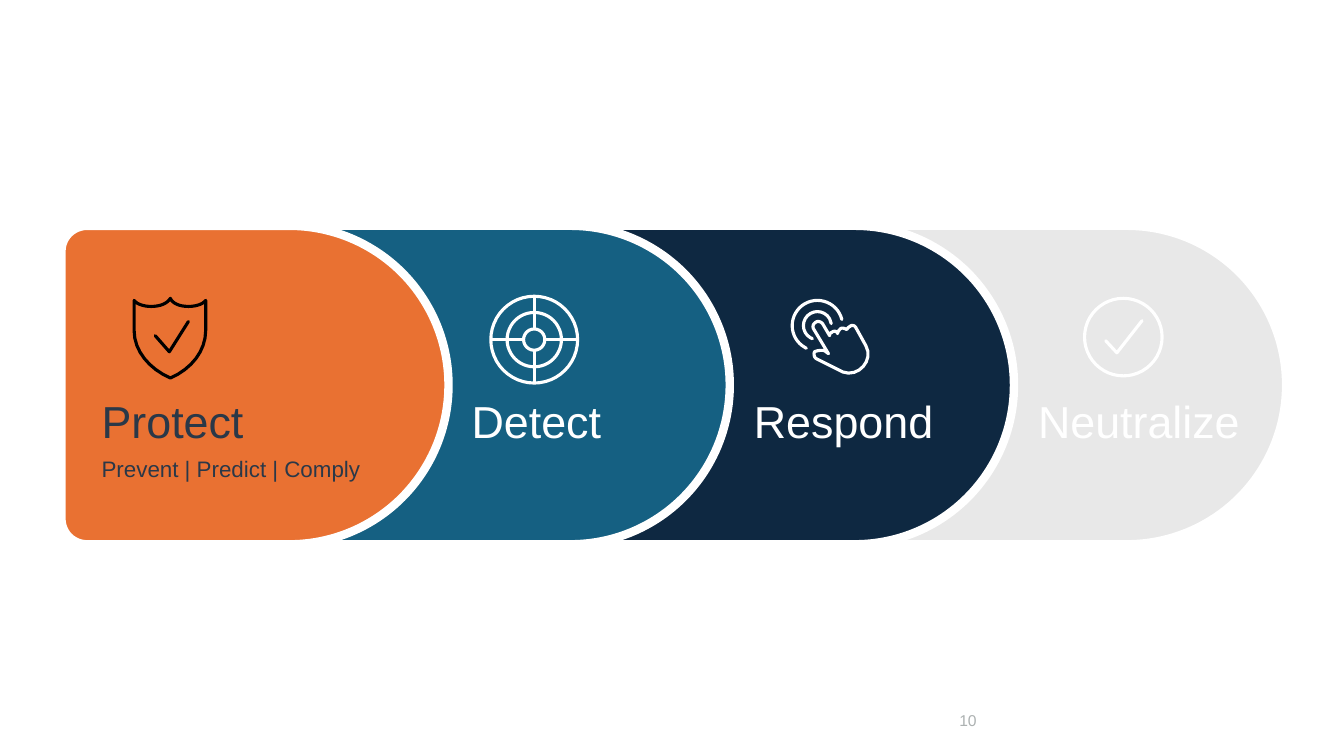
import pptx
import pptx.util
import pptx.dml.color
import pptx.enum.shapes
import pptx.enum.text
from dataclasses import dataclass
from lxml import etree

Pt = pptx.util.Pt
RGB = pptx.dml.color.RGBColor.from_string
PRESET = pptx.enum.shapes.MSO_SHAPE
ANCHOR = pptx.enum.text.MSO_ANCHOR
DRAWING = "{http://schemas.openxmlformats.org/drawingml/2006/main}"


@dataclass(frozen=True)
class Theme:
    font: str = "Arial"
    protect: str = "E97132"
    detect: str = "156082"
    respond: str = "0E2841"
    neutralize: str = "E8E8E8"
    white: str = "FFFFFF"
    black: str = "000000"
    ink: str = "2A3848"
    muted: str = "ACB1B1"
    heading: float = 32
    detail: float = 16
    number: float = 11.2
    gap: float = 6
    stroke: float = 2.25


theme = Theme()
deck = pptx.Presentation()
deck.slide_width, deck.slide_height = Pt(960), Pt(540)
slide = deck.slides.add_slide(deck.slide_layouts[6])
shapes = slide.shapes


def add_text(text, left, top, width, height, size, color, anchor=ANCHOR.TOP):
    box = shapes.add_textbox(Pt(left), Pt(top), Pt(width), Pt(height))
    box.text_frame.word_wrap = True
    box.text_frame.vertical_anchor = anchor
    paragraph = box.text_frame.paragraphs[0]
    paragraph.text = text
    paragraph.font.name = theme.font
    paragraph.font.size = Pt(size)
    paragraph.font.color.rgb = RGB(color)


def add_outline(start, steps, close):
    points = [start]
    for step in steps:
        if len(step) == 2:
            points.append(step)
            continue
        x0, y0 = points[-1]
        x1, y1, x2, y2, x3, y3 = step
        for t in (n / 8 for n in range(1, 9)):
            a, b, c, d = (1 - t) ** 3, 3 * t * (1 - t) ** 2, 3 * t * t * (1 - t), t ** 3
            points.append((a * x0 + b * x1 + c * x2 + d * x3, a * y0 + b * y1 + c * y2 + d * y3))
    corners = [(Pt(x), Pt(y)) for x, y in points]
    builder = shapes.build_freeform(*corners[0])
    builder.add_line_segments(corners[1:], close=close)
    return builder.convert_to_shape()


band_top, band_height = 161.3, 227.5
bands = []
for left, width, color in (
    (413.3, 505.4, theme.neutralize),
    (218.9, 505.4, theme.respond),
    (43.2, 478.1, theme.detect),
):
    band = shapes.add_shape(PRESET.ROUNDED_RECTANGLE, Pt(left), Pt(band_top), Pt(width), Pt(band_height))
    band.adjustments[0] = 0.5
    bands.append((band, color))

protect_left, protect_width = 43.9, 276.5
inset = (protect_width - band_height) / 2
protect_band = shapes.add_shape(
    PRESET.ROUND_2_SAME_RECTANGLE,
    Pt(protect_left + inset), Pt(band_top - inset), Pt(band_height), Pt(protect_width),
)
protect_band.rotation = 270
protect_band.adjustments[0] = 0.08
protect_band.adjustments[1] = 0.5
bands.append((protect_band, theme.protect))

for band, color in bands:
    band.shadow.inherit = False
    band.fill.solid()
    band.fill.fore_color.rgb = RGB(color)
    band.line.color.rgb = RGB(theme.white)
    band.line.width = Pt(theme.gap)

for stage, left, width, color in (
    ("Protect", 65.5, 185, theme.ink),
    ("Detect", 329.8, 185, theme.white),
    ("Respond", 531.4, 166.3, theme.white),
    ("Neutralize", 734.4, 185, theme.white),
):
    add_text(stage, left, 277.9, width, 46.1, size=theme.heading, color=color)
add_text("Prevent | Predict | Comply", 65.5, 321.8, 224.6, 26.6, size=theme.detail, color=theme.ink)
add_text("10", 678.2, 500.4, 216, 28.8, size=theme.number, color=theme.muted, anchor=ANCHOR.MIDDLE)

shield = add_outline((121.7, 270), [
    (106.6, 263.5, 95.8, 250.6, 95.8, 236.2),
    (95.8, 214.6),
    (97.9, 217.4, 103, 218.9, 108, 218.9),
    (114.5, 218.9, 119.5, 216.7, 121.7, 213.1),
    (123.1, 216.7, 128.2, 218.9, 134.6, 218.9),
    (139.7, 218.9, 144.7, 217.4, 146.9, 214.6),
    (146.9, 236.2),
    (146.9, 250.6, 136.8, 263.5, 121.7, 270),
], close=True)
shield_tick = add_outline((110.9, 239.8), [(121, 251.3), (134.6, 229.7)], close=False)
hand = add_outline((582.5, 230.4), [
    (583.9, 229, 586.1, 229.7, 587.5, 231.1),
    (592.6, 239.8),
    (592.6, 238.3, 593.3, 237.6, 594, 237.6),
    (595.4, 236.2, 597.6, 236.2, 598.3, 238.3),
    (598.3, 236.9, 599.8, 235.4, 600.5, 234.7),
    (601.9, 234, 603.4, 234.7, 604.8, 235.4),
    (605.5, 234.7, 605.5, 234, 607, 233.3),
    (608.4, 231.8, 610.6, 232.6, 611.3, 234),
    (618.5, 247),
    (624.2, 257, 613.4, 270, 601.9, 265.7),
    (583.2, 256.3),
    (581.8, 255.6, 581, 253.4, 581.8, 251.3),
    (583.2, 250.6, 586.8, 249.8, 589, 250.6),
    (591.8, 252.7),
    (581, 234.7),
    (580.3, 233.3, 581, 231.1, 582.5, 230.4),
], close=True)
done_tick = add_outline((789.8, 243.4), [(797.8, 252), (815.8, 229)], close=False)
strokes = [
    (shield, theme.black), (shield_tick, theme.black),
    (hand, theme.white), (done_tick, theme.white),
]

target_x, target_y = 381.6, 242.6
for x, y, radius in (
    (target_x, target_y, 31),
    (target_x, target_y, 19.4),
    (target_x, target_y, 7.6),
    (802.4, 240.8, 27.7),
):
    ring = shapes.add_shape(PRESET.OVAL, Pt(x - radius), Pt(y - radius), Pt(2 * radius), Pt(2 * radius))
    strokes.append((ring, theme.white))

for dx, dy in ((0, -1), (1, 0), (0, 1), (-1, 0)):
    hair = shapes.add_connector(
        pptx.enum.shapes.MSO_CONNECTOR.STRAIGHT,
        Pt(target_x + 30 * dx), Pt(target_y + 30 * dy),
        Pt(target_x + 7.9 * dx), Pt(target_y + 7.9 * dy),
    )
    strokes.append((hair, theme.white))

for radius, start, end in ((10, 111, 352), (18, 116, 346)):
    ripple = shapes.add_shape(
        PRESET.ARC, Pt(583.9 - radius), Pt(232.6 - radius), Pt(2 * radius), Pt(2 * radius)
    )
    ripple.adjustments[0] = start * 0.6
    ripple.adjustments[1] = end * 0.6
    strokes.append((ripple, theme.white))

for piece, color in strokes:
    piece.line.color.rgb = RGB(color)
    piece.line.width = Pt(theme.stroke)
    outline = piece.line._get_or_add_ln()
    outline.set("cap", "rnd")
    etree.SubElement(outline, DRAWING + "round")
    if hasattr(piece, "fill"):
        piece.fill.background()
        piece.shadow.inherit = False
    else:
        etree.SubElement(piece._element.spPr, DRAWING + "effectLst")

deck.save("out.pptx")
